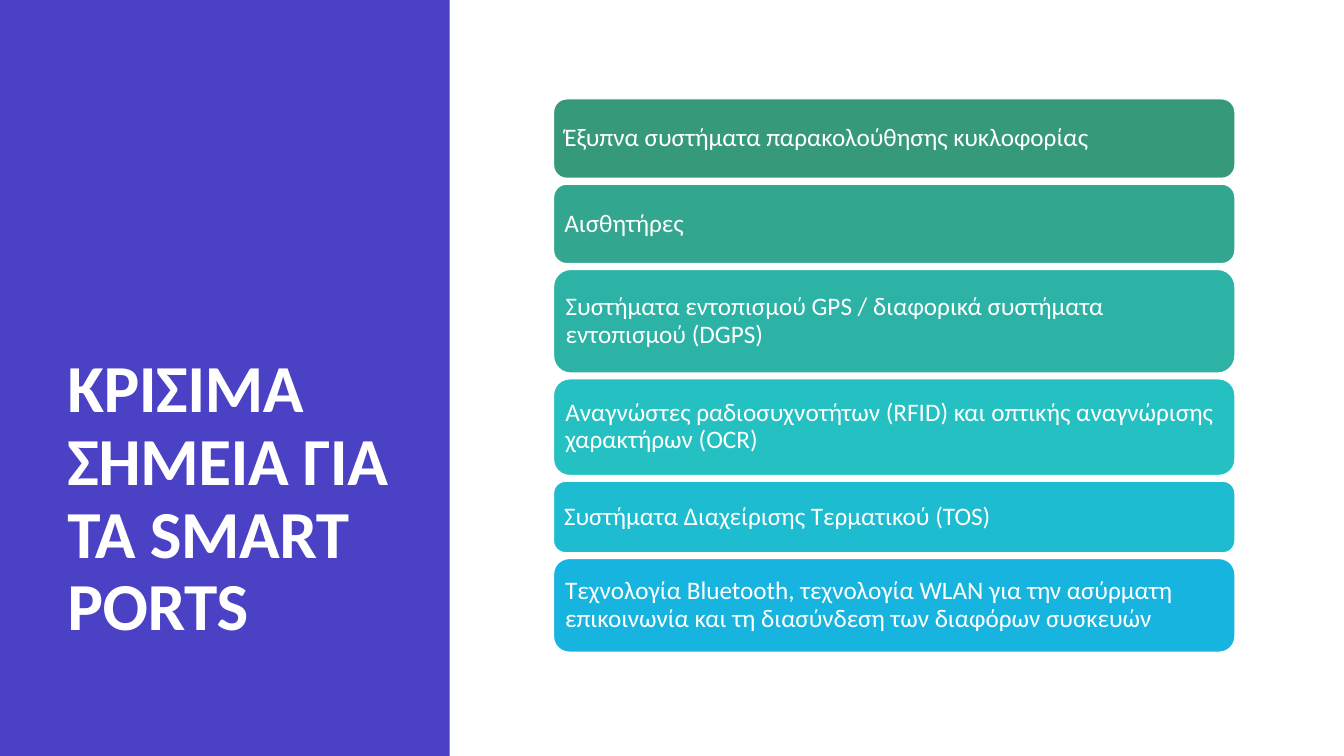
from pptx import Presentation
from pptx.dml.color import RGBColor
from pptx.enum.shapes import MSO_SHAPE
from pptx.enum.text import MSO_ANCHOR, PP_ALIGN
from pptx.util import Inches, Pt

RECT, ROUNDED = MSO_SHAPE.RECTANGLE, MSO_SHAPE.ROUNDED_RECTANGLE
BOTTOM, MIDDLE = MSO_ANCHOR.BOTTOM, MSO_ANCHOR.MIDDLE
LEFT = PP_ALIGN.LEFT

THEME = {
    "panel": RGBColor.from_string("4A41C5"),
    "white": RGBColor.from_string("FFFFFF"),
    "title": {"name": "Calibri", "size": Pt(48), "bold": True},
    "body": {"name": "Calibri", "size": Pt(18), "bold": False},
}

prs = Presentation()
prs.slide_width, prs.slide_height = Inches(13.33), Inches(7.5)
s = prs.slides.add_slide(prs.slide_layouts[6])


def area(left, top, width, height):
    w, h = prs.slide_width / 100, prs.slide_height / 100
    return [round(v) for v in (left * w, top * h, width * w, height * h)]


def write(sp, text, style, anchor, inset):
    tf = sp.text_frame
    frame = {"word_wrap": True, "vertical_anchor": anchor}
    for side in ("left", "right", "top", "bottom"):
        frame[f"margin_{side}"] = inset
    for name, value in frame.items():
        setattr(tf, name, value)
    p = tf.paragraphs[0]
    p.alignment, p.line_spacing = LEFT, 0.9
    r = p.add_run()
    r.text = text
    for name, value in THEME[style].items():
        setattr(r.font, name, value)
    r.font.color.rgb = THEME["white"]
    return r


panel = s.shapes.add_shape(RECT, *area(0, 0, 33.46, 100))
panel.shadow.inherit = False
panel.fill.solid()
panel.fill.fore_color.rgb = THEME["panel"]
panel.line.fill.background()

title = s.shapes.add_textbox(*area(4.28, 6.8, 25.88, 79.87))
r = write(title, "ΚΡΙΣΙΜΑ ΣΗΜΕΙΑ ΓΙΑ ΤΑ SMART PORTS", "title", BOTTOM, Inches(0.1))
r.font._element.set("spc", "-40")

points = [
    ("Έξυπνα συστήματα παρακολούθησης κυκλοφορίας", "37997B", 10.53),
    ("Αισθητήρες", "32A68E", 10.53),
    ("Συστήματα εντοπισμού GPS / διαφορικά συστήματα εντοπισμού (DGPS)", "2CB3A6", 13.73),
    ("Αναγνώστες ραδιοσυχνοτήτων (RFID) και οπτικής αναγνώρισης χαρακτήρων (OCR)", "25C0C1", 12.8),
    ("Συστήματα Διαχείρισης Τερματικού (TOS)", "1EBCD0", 9.47),
    ("Τεχνολογία Bluetooth, τεχνολογία WLAN για την ασύρματη επικοινωνία "
     "και τη διασύνδεση των διαφόρων συσκευών", "17B4DF", 12.4),
]
top, gap = 13.07, 0.75
for text, color, height in points:
    sp = s.shapes.add_shape(ROUNDED, *area(41.18, top, 50.71, height))
    sp.shadow.inherit = False
    sp.fill.solid()
    sp.fill.fore_color.rgb = RGBColor.from_string(color)
    sp.line.color.rgb = THEME["white"]
    sp.line.width = Pt(1)
    write(sp, text, "body", MIDDLE, Inches(0.07))
    top += height + gap

prs.save("out.pptx")
